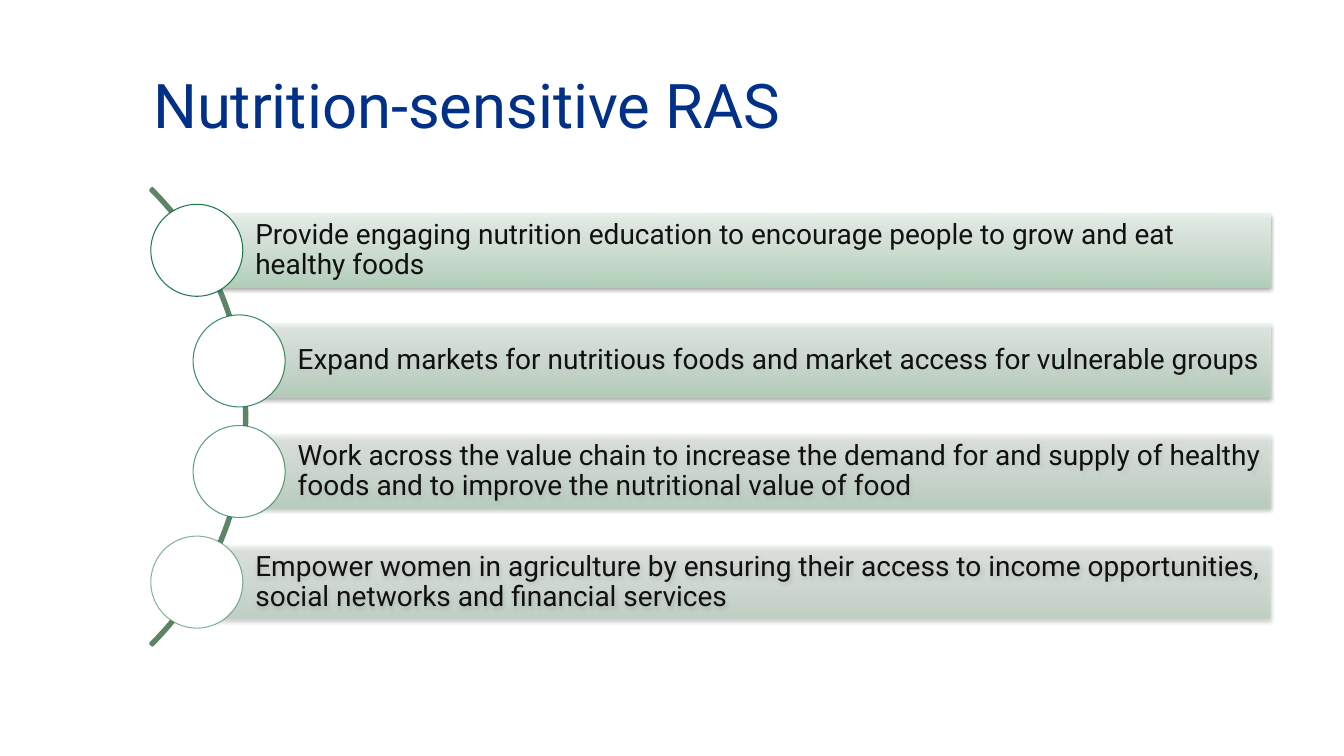
from pptx import Presentation
from pptx.dml.color import RGBColor
from pptx.enum.shapes import MSO_SHAPE
from pptx.enum.text import MSO_ANCHOR, PP_ALIGN
from pptx.oxml import parse_xml
from pptx.oxml.ns import nsdecls, qn
from pptx.util import Pt


def tint(fill, color):
    fill.solid()
    fill.fore_color.rgb = RGBColor.from_string(color)


def node(tag, attrs="", inner=""):
    """Build a DrawingML element."""
    return parse_xml(f'<a:{tag} {nsdecls("a")} {attrs}>{inner}</a:{tag}>')


LINES = [
    "Provide engaging nutrition education to encourage people to grow and eat healthy foods",
    "Expand markets for nutritious foods and market access for vulnerable groups",
    "Work across the value chain to increase the demand for and supply of healthy foods"
    " and to improve the nutritional value of food",
    "Empower women in agriculture by ensuring their access to income opportunities,"
    " social networks and financial services",
]
STOPS = [(0, "B2D2BA"), (35, "CADECF"), (100, "EBF3ED")]
LEFTS = [140.6, 170.8, 170.8, 140.6]
RIGHT, TOP, PITCH = 907.2, 152.5, 79
HIGH, DISC = 52.6, 65.7

deck = Presentation()
deck.slide_width, deck.slide_height = Pt(960), Pt(540)
slide = deck.slides.add_slide(deck.slide_layouts[5])
shapes = slide.shapes

title = shapes.title
title.left, title.top, title.width, title.height = Pt(102.2), Pt(37.4), Pt(810), Pt(74.2)
title.text_frame.text = "Nutrition-sensitive RAS"
title.text_frame.vertical_anchor = MSO_ANCHOR.MIDDLE
para = title.text_frame.paragraphs[0]
para.alignment = PP_ALIGN.LEFT
para.font.name, para.font.size = "Roboto", Pt(44)
tint(para.font.fill, "003087")

# Thin arc that the discs sit on, from -45 to 45 degrees
arc = shapes.add_shape(MSO_SHAPE.BLOCK_ARC, Pt(-285.1), Pt(67), Pt(461.5), Pt(461.5))
for i, value in enumerate([189, 27, 0.004]):
    arc.adjustments[i] = value
arc.shadow.inherit = False
arc.fill.background()
tint(arc.line.fill, "5E8468")
arc.line.width = Pt(2)

for i, (text, left) in enumerate(zip(LINES, LEFTS)):
    top = TOP + i * PITCH
    alpha = f'<a:alpha val="{round(90000 - i * 40000 / 3)}"/>'

    bar = shapes.add_shape(MSO_SHAPE.RECTANGLE, Pt(left), Pt(top), Pt(RIGHT - left), Pt(HIGH))
    bar.line.fill.background()
    bar.shadow.inherit = False
    stops = "".join(
        f'<a:gs pos="{pos * 1000}"><a:srgbClr val="{color}">{alpha}</a:srgbClr></a:gs>'
        for pos, color in STOPS)
    props = bar._element.spPr
    props.find(qn("a:ln")).addprevious(node(
        "gradFill", 'rotWithShape="1"',
        f'<a:gsLst>{stops}</a:gsLst><a:lin ang="16200000" scaled="0"/>'))
    props.find(qn("a:effectLst")).append(node(
        "outerShdw", 'blurRad="40000" dist="20000" dir="5400000" rotWithShape="0"',
        '<a:srgbClr val="000000"><a:alpha val="38000"/></a:srgbClr>'))

    frame = bar.text_frame
    frame.text = text
    frame.word_wrap = True
    frame.vertical_anchor = MSO_ANCHOR.MIDDLE
    frame.margin_left = Pt(41.8)
    frame.margin_right = frame.margin_top = frame.margin_bottom = Pt(4)
    para = frame.paragraphs[0]
    para.alignment = PP_ALIGN.LEFT
    para.line_spacing = 0.9
    para.font.name, para.font.size = "Roboto", Pt(20)
    tint(para.font.fill, "111111")

    disc = shapes.add_shape(MSO_SHAPE.OVAL, Pt(left - DISC / 2), Pt(top + (HIGH - DISC) / 2),
                            Pt(DISC), Pt(DISC))
    disc.shadow.inherit = False
    tint(disc.fill, "FFFFFF")
    tint(disc.line.fill, "046A38")
    disc.line.width = Pt(0.75)
    ink = disc._element.spPr.find(qn("a:ln")).find(".//" + qn("a:srgbClr"))
    ink.append(node("alpha", f'val="{round(90000 - i * 40000 / 3)}"'))

deck.save("out.pptx")
